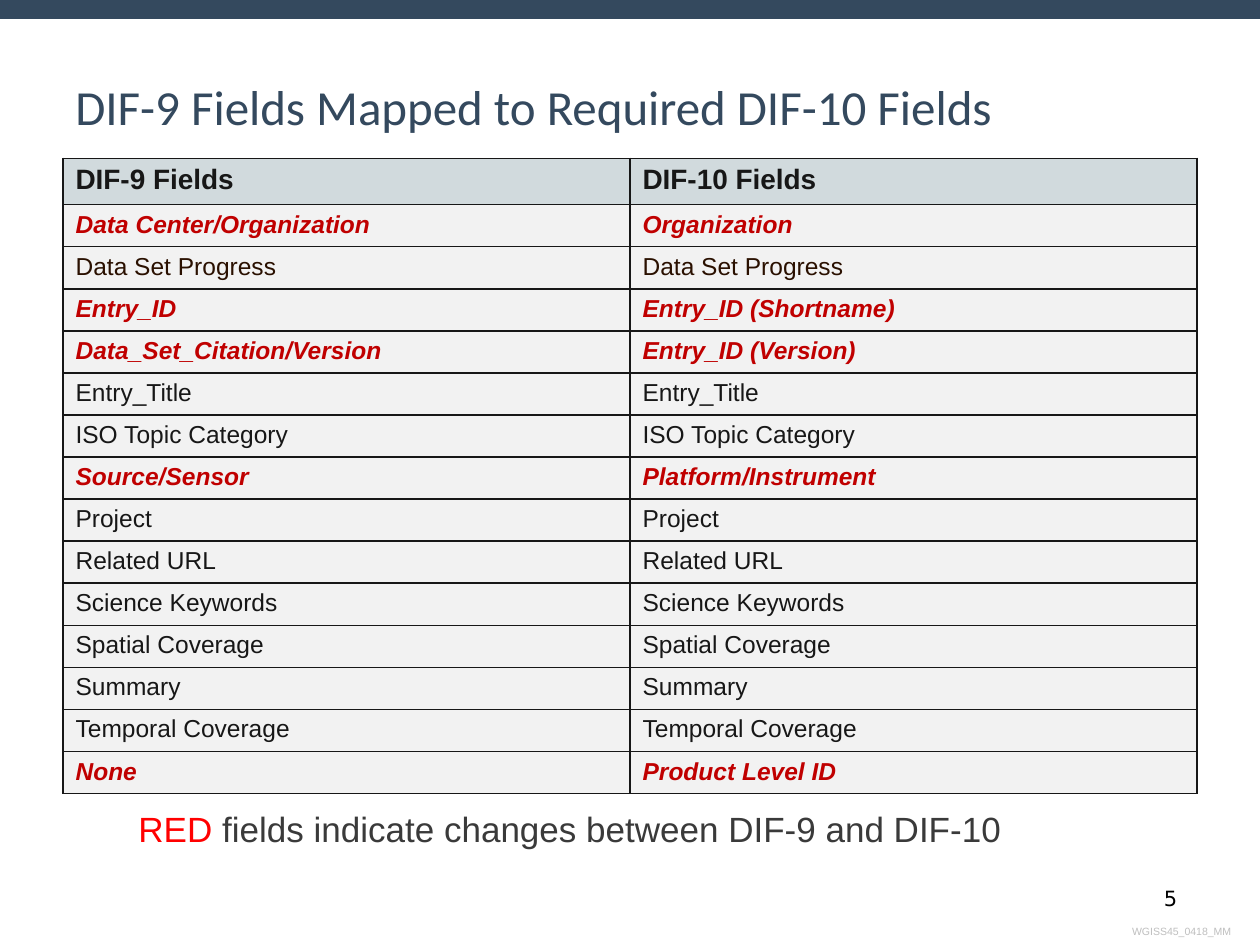
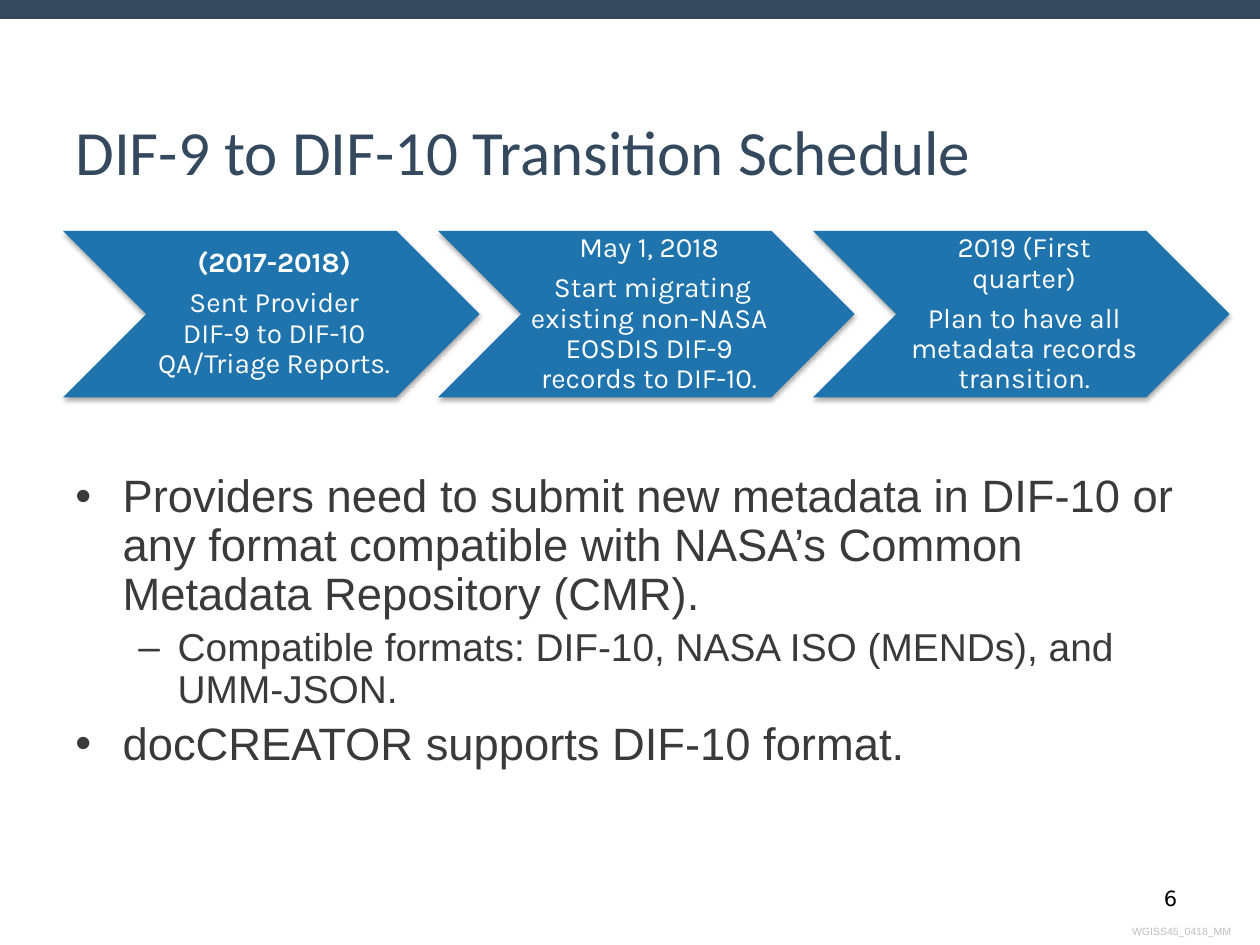
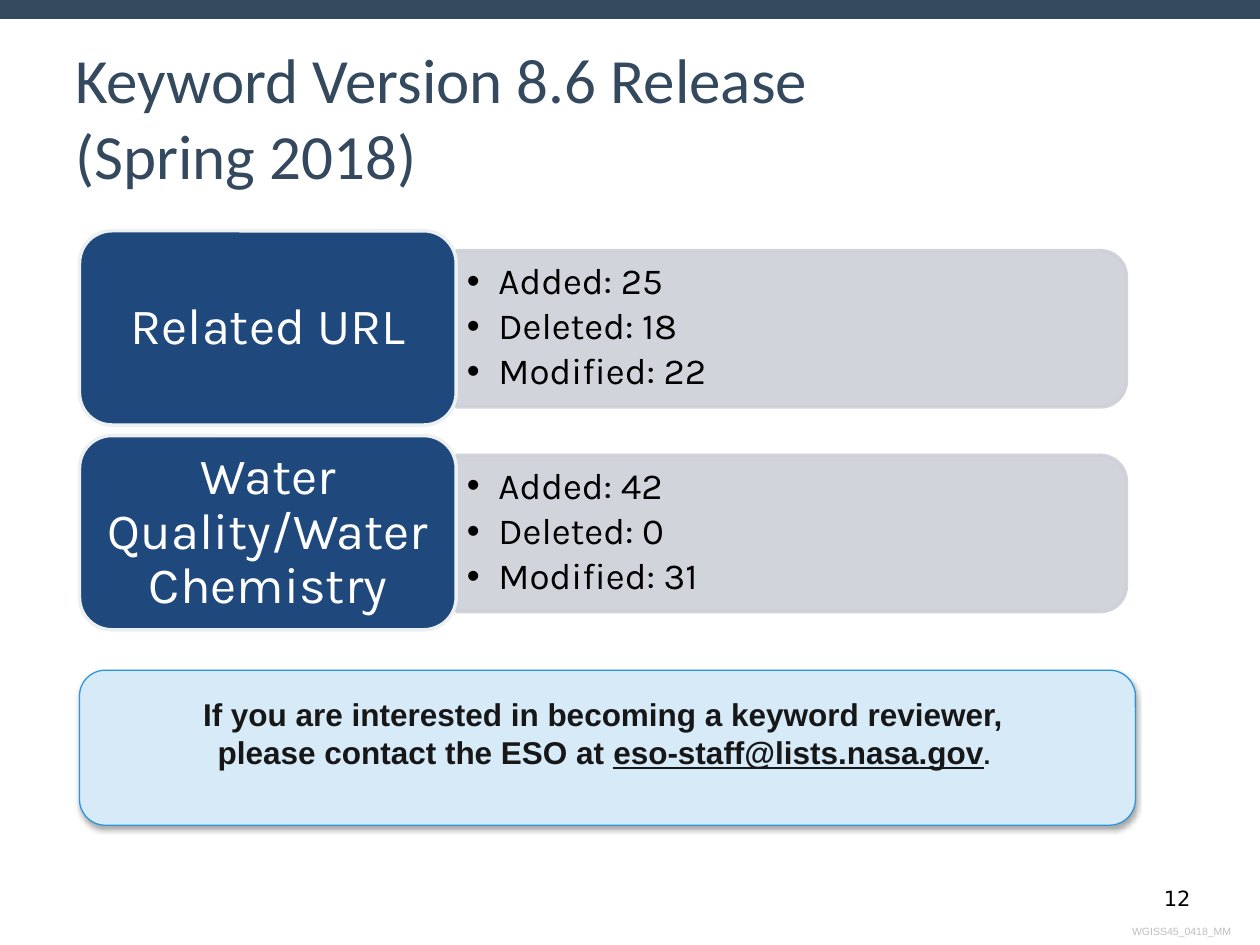
import pptx
import pptx.util
import pptx.dml.color
import pptx.enum.shapes
import pptx.enum.text
import pptx.oxml.ns
import lxml.etree

Pt = pptx.util.Pt
RGBColor = pptx.dml.color.RGBColor
Kind = pptx.enum.shapes.MSO_SHAPE
Align = pptx.enum.text.PP_ALIGN
Anchor = pptx.enum.text.MSO_ANCHOR
qn = pptx.oxml.ns.qn
sub = lxml.etree.SubElement

SLATE = RGBColor(0x34, 0x49, 0x5E)
WHITE = RGBColor(0xFF, 0xFF, 0xFF)
BLACK = RGBColor(0x00, 0x00, 0x00)
INK = RGBColor(0x17, 0x17, 0x17)
BROWN = RGBColor(0x2A, 0x10, 0x00)
GRAY = RGBColor(0x3A, 0x3A, 0x3A)
PALE = RGBColor(0xBF, 0xBF, 0xBF)
RED = RGBColor(0xFF, 0x00, 0x00)
CRIMSON = RGBColor(0xC0, 0x00, 0x00)
HEAD = RGBColor(0xD1, 0xDA, 0xDD)
CELL = RGBColor(0xF2, 0xF2, 0xF2)
BLUE = RGBColor(0x1F, 0x74, 0xAD)
NAVY = RGBColor(0x1F, 0x49, 0x7D)
CLOUD = RGBColor(0xEC, 0xF0, 0xF1)
SILVER = RGBColor(0xCD, 0xD0, 0xD7)
SKY = RGBColor(0xD6, 0xEA, 0xF8)
AZURE = RGBColor(0x2F, 0x95, 0xDA)


def draw(slide, kind, box, fill, line=None, weight=2, shade=False):
    shape = slide.shapes.add_shape(kind, *map(Pt, box))
    shape.fill.solid()
    shape.fill.fore_color.rgb = fill
    if line is None:
        shape.line.fill.background()
    else:
        shape.line.color.rgb = line
        shape.line.width = Pt(weight)
    shape.shadow.inherit = False
    if shade:
        effect = shape._element.spPr.find(qn("a:effectLst"))
        outer = sub(effect, qn("a:outerShdw"), blurRad=str(Pt(3.1)),
                    dist=str(Pt(1.8)), dir="5400000", rotWithShape="0")
        color = sub(outer, qn("a:srgbClr"), val="000000")
        sub(color, qn("a:alpha"), val="35000")
    return shape


def put(slide, box, lines, size, color, font="Arial", align=Align.LEFT,
        anchor=Anchor.TOP, pad=(7.2, 3.6, 7.2, 3.6)):
    """Add a text box with one paragraph per line and return its paragraphs."""
    frame = slide.shapes.add_textbox(*map(Pt, box)).text_frame
    frame.word_wrap = True
    frame.vertical_anchor = anchor
    (frame.margin_left, frame.margin_top,
     frame.margin_right, frame.margin_bottom) = map(Pt, pad)
    frame.text = "\n".join(lines)
    for par in frame.paragraphs:
        par.alignment = align
        for run in par.runs:
            run.font.name = font
            run.font.size = Pt(size)
            run.font.color.rgb = color
    return frame.paragraphs


deck = pptx.Presentation()
deck.slide_width, deck.slide_height = Pt(720), Pt(540)

# Band, title and footer of every slide
WIDE = (7.2, 7.2, 7.2, 7.2)
SLIM = (7.2, 3.6, 7.2, 3.6)
pages = [
    ("5", ["DIF-9 Fields Mapped to Required DIF-10 Fields"], 28, 24.5, 59.8, Anchor.BOTTOM, WIDE),
    ("6", ["DIF-9 to DIF-10 Transition Schedule"], 36, 24.5, 90, Anchor.BOTTOM, WIDE),
    ("12", ["Keyword Version 8.6 Release", "(Spring 2018)"], 36, 21.6, 90, Anchor.MIDDLE, SLIM),
]
slides = []
for page, title, size, top, high, anchor, pad in pages:
    slide = deck.slides.add_slide(deck.slide_layouts[6])
    draw(slide, Kind.RECTANGLE, (0, 0, 720, 10.8), SLATE)
    put(slide, (628.6, 524.9, 82, 14.4), ["WGISS45_0418_MM"], 6, PALE, align=Align.RIGHT)
    put(slide, (658, 502.6, 42, 21.6), [page], 12, BLACK, "DejaVu Sans")
    put(slide, (36, top, 648, high), title, size, SLATE, "Calibri", anchor=anchor, pad=pad)
    slides.append(slide)
fields, plan, release = slides

# Field table
rows = [
    ("DIF-9 Fields", "DIF-10 Fields"),
    ("Data Center/Organization", "Organization"),
    ("Data Set Progress", "Data Set Progress"),
    ("Entry_ID", "Entry_ID (Shortname)"),
    ("Data_Set_Citation/Version", "Entry_ID (Version)"),
    ("Entry_Title", "Entry_Title"),
    ("ISO Topic Category", "ISO Topic Category"),
    ("Source/Sensor", "Platform/Instrument"),
    ("Project", "Project"),
    ("Related URL", "Related URL"),
    ("Science Keywords", "Science Keywords"),
    ("Spatial Coverage", "Spatial Coverage"),
    ("Summary", "Summary"),
    ("Temporal Coverage", "Temporal Coverage"),
    ("None", "Product Level ID"),
]
table = fields.shapes.add_table(len(rows), 2, Pt(36), Pt(90.5), Pt(648), Pt(24 * len(rows))).table
for i, row in enumerate(rows):
    table.rows[i].height = Pt(24)
    head = i == 0
    changed = not head and row[0] != row[1]
    for j, text in enumerate(row):
        cell = table.cell(i, j)
        cell.text = text
        font = cell.text_frame.paragraphs[0].runs[0].font
        font.name = "Arial"
        font.size = Pt(16 if head else 14)
        font.bold = head or changed
        font.italic = changed
        font.color.rgb = CRIMSON if changed else BROWN if text == "Data Set Progress" else INK
        props = cell._tc.get_or_add_tcPr()
        for side in ("lnL", "lnR", "lnT", "lnB"):
            edge = sub(props, qn("a:" + side), w=str(Pt(1)))
            sub(sub(edge, qn("a:solidFill")), qn("a:srgbClr"), val=str(INK))
        cell.fill.solid()
        cell.fill.fore_color.rgb = HEAD if head else CELL

note = put(fields, (36, 457.9, 648, 36.7), ["RED"], 20, RED)[0]
note.space_before = Pt(4)
note._p.get_or_add_pPr().set("marL", str(Pt(36)))
rest = note.add_run()
rest.text = " fields indicate changes between DIF-9 and DIF-10"
rest.font.name = "Arial"
rest.font.size = Pt(20)
rest.font.color.rgb = GRAY

# Schedule chevrons
steps = [
    ("(2017-2018)", "Sent Provider DIF-9 to DIF-10 QA/Triage Reports."),
    ("May 1, 2018", " Start migrating existing non-NASA EOSDIS DIF-9 records to DIF-10."),
    ("2019 (First quarter)", "Plan to have all metadata records transition."),
]
wide, high, top = 238.1, 95.2, 131.9
for i, step in enumerate(steps):
    left = 36 + i * 0.9 * wide
    draw(plan, Kind.CHEVRON, (left, top, wide, high), BLUE, shade=True)
    pars = put(plan, (left + high / 2, top, wide - high, high), step, 16, WHITE, "Karla",
               Align.CENTER, Anchor.MIDDLE, (4.8, 1.6, 1.6, 1.6))
    for par in pars:
        par.line_spacing = 0.9
        par.space_after = Pt(5.6)
    if i == 0:
        pars[0].runs[0].font.bold = True

# Bulleted paragraphs: paragraph, sign, left margin, hang
points = []
body = put(plan, (36, 267.1, 648, 180.7), [
    "Providers need to submit new metadata in DIF-10 or any format compatible with "
    "NASA’s Common Metadata Repository (CMR).",
    "Compatible formats: DIF-10, NASA ISO (MENDs), and UMM-JSON.",
    "docCREATOR supports DIF-10 format.",
], 25.9, GRAY)
for par, sign, left, hang, size in zip(body, "•–•", (27, 58.5, 27), (27, 22.5, 27),
                                       (25.9, 22.2, 25.9)):
    par.runs[0].font.size = Pt(size)
    par.space_before = Pt(0.2 * size)
    points.append((par, sign, left, hang))

# Keyword counts
groups = [
    ("Related URL", 25, 18, 22),
    ("Water Quality/Water Chemistry", 42, 0, 31),
]
for i, (name, added, gone, changed) in enumerate(groups):
    top = 131.9 + i * 117
    bar = draw(release, Kind.ROUND_2_SAME_RECTANGLE, (407.5, top - 135.5, 89.3, 383),
               SILVER, SILVER)
    bar.rotation = 90
    for color in bar._element.spPr.iter(qn("a:srgbClr")):
        sub(color, qn("a:alpha"), val="90000")
    counts = [f"Added: {added}", f"Deleted: {gone}", f"Modified: {changed}"]
    for par in put(release, (260.6, top + 15.5, 378.7, 80), counts, 21, BLACK, "Karla",
                   anchor=Anchor.MIDDLE, pad=(6.3, 3.15, 6.3, 3.15)):
        par.space_after = Pt(3.15)
        points.append((par, "•", 18, 18))
    draw(release, Kind.ROUNDED_RECTANGLE, (45.4, top, 215.3, 111), NAVY, CLOUD)
    label = put(release, (51, top + 5.5, 204.5, 100), [name], 29, WHITE, "Karla",
                Align.CENTER, Anchor.MIDDLE, (8.7, 4.35, 8.7, 4.35))[0]
    label.line_spacing = 0.9

for par, sign, left, hang in points:
    par.line_spacing = 0.9
    props = par._p.get_or_add_pPr()
    props.set("marL", str(Pt(left)))
    props.set("indent", str(-Pt(hang)))
    sub(props, qn("a:buFont"), typeface="Arial")
    sub(props, qn("a:buChar"), char=sign)

# Reviewer notice
card = draw(release, Kind.ROUNDED_RECTANGLE, (45.4, 383, 603.4, 88.6), SKY, AZURE, 0.75, True)
frame = card.text_frame
frame.word_wrap = True
frame.vertical_anchor = Anchor.MIDDLE
frame.margin_bottom = Pt(20)
frame.text = "If you are interested in becoming a keyword reviewer, \nplease contact the ESO at "
for text in ("eso-staff@lists.nasa.gov", ". "):
    frame.paragraphs[1].add_run().text = text
for par in frame.paragraphs:
    par.alignment = Align.CENTER
    for run in par.runs:
        run.font.name = "Arial"
        run.font.size = Pt(18)
        run.font.bold = True
        run.font.color.rgb = INK
mail, stop = frame.paragraphs[1].runs[1:]
mail.font.underline = True
stop.font.size = Pt(14)

deck.save("out.pptx")
